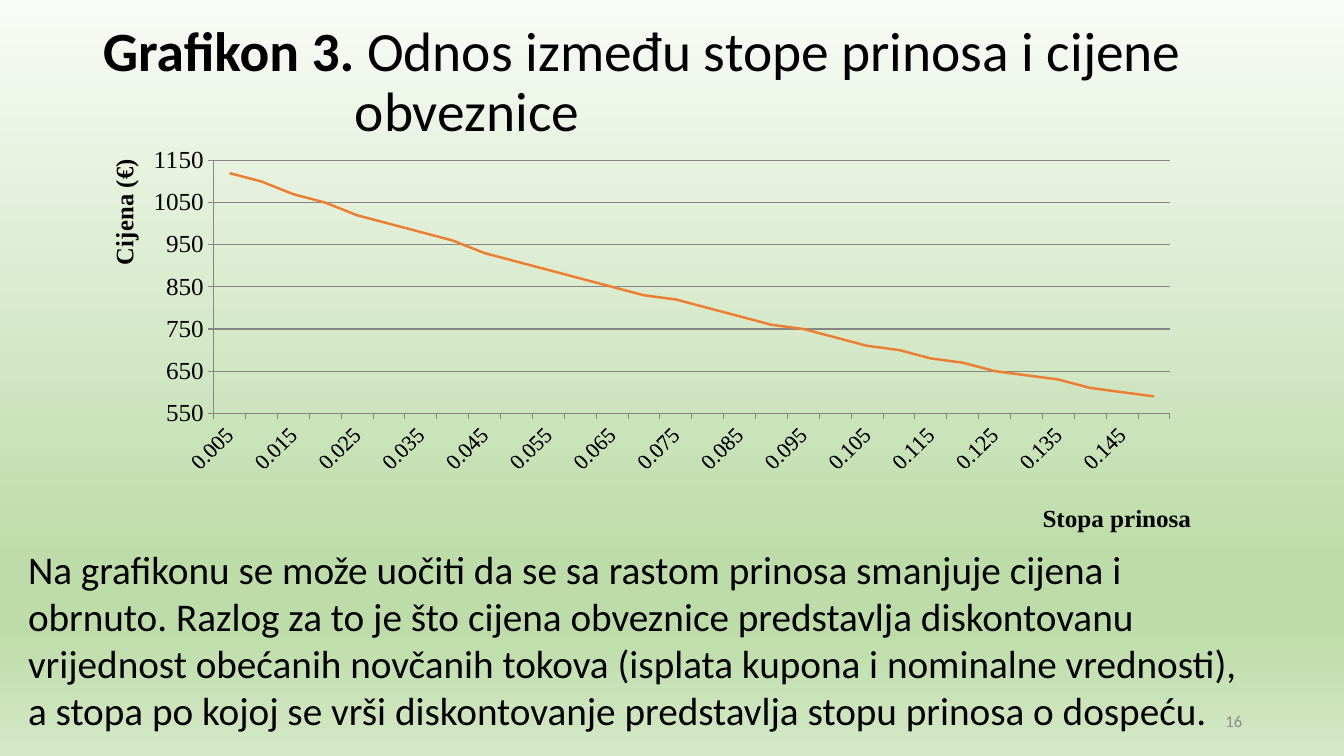
"""Builds the slide on bond yield and bond price."""
from dataclasses import dataclass

from lxml.etree import SubElement
from pptx import Presentation
from pptx.chart.data import CategoryChartData
from pptx.dml.color import RGBColor
from pptx.enum.chart import XL_CHART_TYPE, XL_TICK_MARK
from pptx.enum.text import MSO_ANCHOR, MSO_AUTO_SIZE, PP_ALIGN
from pptx.oxml import parse_xml
from pptx.oxml.ns import nsdecls, qn
from pptx.util import Inches, Pt


@dataclass(frozen=True)
class Theme:
    font: str = "Calibri"
    chart_font: str = "Times New Roman"
    text: str = "000000"
    muted: str = "8C8C8C"
    grid: str = "868686"
    line: str = "ED7D31"
    background: tuple = ((0, "F8FBF6"), (74, "BEDCAA"), (83, "BEDCAA"), (100, "D4E8C6"))
    title_size: float = 39.6
    body_size: int = 28
    chart_size: int = 18
    category_size: int = 16
    number_size: int = 12


class SlideBuilder:
    def __init__(self, slide, theme):
        self.slide = slide
        self.theme = theme

    def style(self, font, size, name=None, color=None, bold=False):
        font.name = name or self.theme.font
        font.size = Pt(size)
        font.bold = bold
        font.color.rgb = RGBColor.from_string(color or self.theme.text)

    def place(self, sp, box):
        sp.left, sp.top, sp.width, sp.height = map(Inches, box)

    def background(self):
        stops = "".join(
            f'<a:gs pos="{pos * 1000}"><a:srgbClr val="{color}"/></a:gs>'
            for pos, color in self.theme.background)
        bg = parse_xml(
            f'<p:bg {nsdecls("p", "a")}><p:bgPr><a:gradFill rotWithShape="1">'
            f'<a:gsLst>{stops}</a:gsLst><a:lin ang="5400000" scaled="0"/>'
            '</a:gradFill><a:effectLst/></p:bgPr></p:bg>')
        self.slide.element.cSld.insert(0, bg)

    def title(self, label, text, box, indent):
        sp = self.slide.shapes.title
        self.place(sp, box)
        tf = sp.text_frame
        tf.word_wrap = True
        tf.auto_size = MSO_AUTO_SIZE.NONE
        tf.vertical_anchor = MSO_ANCHOR.MIDDLE
        p = tf.paragraphs[0]
        p.alignment = PP_ALIGN.LEFT
        p.line_spacing = 0.9
        pPr = p._p.get_or_add_pPr()
        pPr.set("marL", str(Inches(indent)))
        pPr.set("indent", str(-Inches(indent)))
        for part, bold in ((label, True), (text, False)):
            r = p.add_run()
            r.text = part
            self.style(r.font, self.theme.title_size, bold=bold)

    def text(self, text, box, size, color=None, align=PP_ALIGN.LEFT, anchor=MSO_ANCHOR.TOP):
        tf = self.slide.shapes.add_textbox(*map(Inches, box)).text_frame
        tf.word_wrap = True
        tf.vertical_anchor = anchor
        tf.text = text
        p = tf.paragraphs[0]
        p.alignment = align
        self.style(p.runs[0].font, size, color=color)

    def layout(self, parent, index, **values):
        for old in parent.findall(qn("c:layout")):
            parent.remove(old)
        layout = parse_xml(f'<c:layout {nsdecls("c")}><c:manualLayout/></c:layout>')
        for tag, value in values.items():
            SubElement(layout[0], qn(f"c:{tag}")).set("val", str(value))
        parent.insert(index, layout)

    def axis(self, axis, title, x, y, size, number_format):
        theme = self.theme
        axis.major_tick_mark = XL_TICK_MARK.OUTSIDE
        axis.minor_tick_mark = XL_TICK_MARK.NONE
        axis.format.line.color.rgb = RGBColor.from_string(theme.grid)
        axis.format.line.width = Pt(0.75)
        labels = axis.tick_labels
        labels.number_format = number_format
        labels.number_format_is_linked = False
        self.style(labels.font, size, theme.chart_font)
        tf = axis.axis_title.text_frame
        tf.text = title
        self.style(tf.paragraphs[0].runs[0].font, theme.chart_size, theme.chart_font, bold=True)
        self.layout(axis.axis_title._element, 1, xMode="edge", yMode="edge", x=x, y=y)

    def line_chart(self, rates, prices, box):
        theme = self.theme
        data = CategoryChartData(number_format="0")
        data.categories = rates
        data.add_series("Series 1", prices)
        chart = self.slide.shapes.add_chart(
            XL_CHART_TYPE.LINE, *map(Inches, box), data).chart
        chart.has_title = False
        chart.has_legend = False
        self.style(chart.font, theme.chart_size, theme.chart_font)
        plot = chart.plots[0]
        plot.vary_by_categories = False
        series = plot.series[0]
        series.smooth = False
        series.format.line.color.rgb = RGBColor.from_string(theme.line)
        series.format.line.width = Pt(1.75)

        cat = chart.category_axis
        self.axis(cat, "Stopa prinosa", 0.86, 0.92, theme.category_size, "0.00%")
        cat._element.find(qn("c:txPr")).find(qn("a:bodyPr")).set("rot", "-2700000")
        skip = parse_xml(f'<c:tickLblSkip {nsdecls("c")} val="2"/>')
        cat._element.find(qn("c:noMultiLvlLbl")).addprevious(skip)

        val = chart.value_axis
        self.axis(val, "Cijena (€)", 0.01, 0.04, theme.chart_size, "0")
        val.axis_title.text_frame._txBody.bodyPr.set("rot", "-5400000")
        val.minimum_scale, val.maximum_scale, val.major_unit = 550, 1150, 100
        val.has_major_gridlines = True
        grid = val.major_gridlines.format.line
        grid.color.rgb = RGBColor.from_string(theme.grid)
        grid.width = Pt(0.75)
        self.layout(chart._chartSpace.chart.plotArea, 0, layoutTarget="inner",
                    xMode="edge", yMode="edge", x=0.11, y=0.05, w=0.87, h=0.65)


def main():
    theme = Theme()
    prs = Presentation()
    prs.slide_width, prs.slide_height = Inches(13.33), Inches(7.5)
    builder = SlideBuilder(prs.slides.add_slide(prs.slide_layouts[5]), theme)
    builder.background()
    builder.title("Grafikon 3. ", "Odnos između stope prinosa i cijene obveznice",
                  (0.92, 0.1, 11.5, 1.45), 2.5)
    rates = [step / 200 for step in range(1, 31)]
    prices = [1120, 1100, 1070, 1050, 1020, 1000, 980, 960, 930, 910,
              890, 870, 850, 830, 820, 800, 780, 760, 750, 730,
              710, 700, 680, 670, 650, 640, 630, 610, 600, 590]
    builder.line_chart(rates, prices, (0.92, 1.4, 10.94, 3.96))
    builder.text("16", (9.42, 6.95, 3, 0.4), theme.number_size, theme.muted,
                 PP_ALIGN.RIGHT, MSO_ANCHOR.MIDDLE)
    builder.text(
        "Na grafikonu se može uočiti da se sa rastom prinosa smanjuje cijena i obrnuto. "
        "Razlog za to je što cijena obveznice predstavlja diskontovanu vrijednost obećanih "
        "novčanih tokova (isplata kupona i nominalne vrednosti), a stopa po kojoj se vrši "
        "diskontovanje predstavlja stopu prinosa o dospeću.",
        (0.18, 5.36, 12.24, 1.99), theme.body_size)
    prs.save("out.pptx")


if __name__ == "__main__":
    main()
